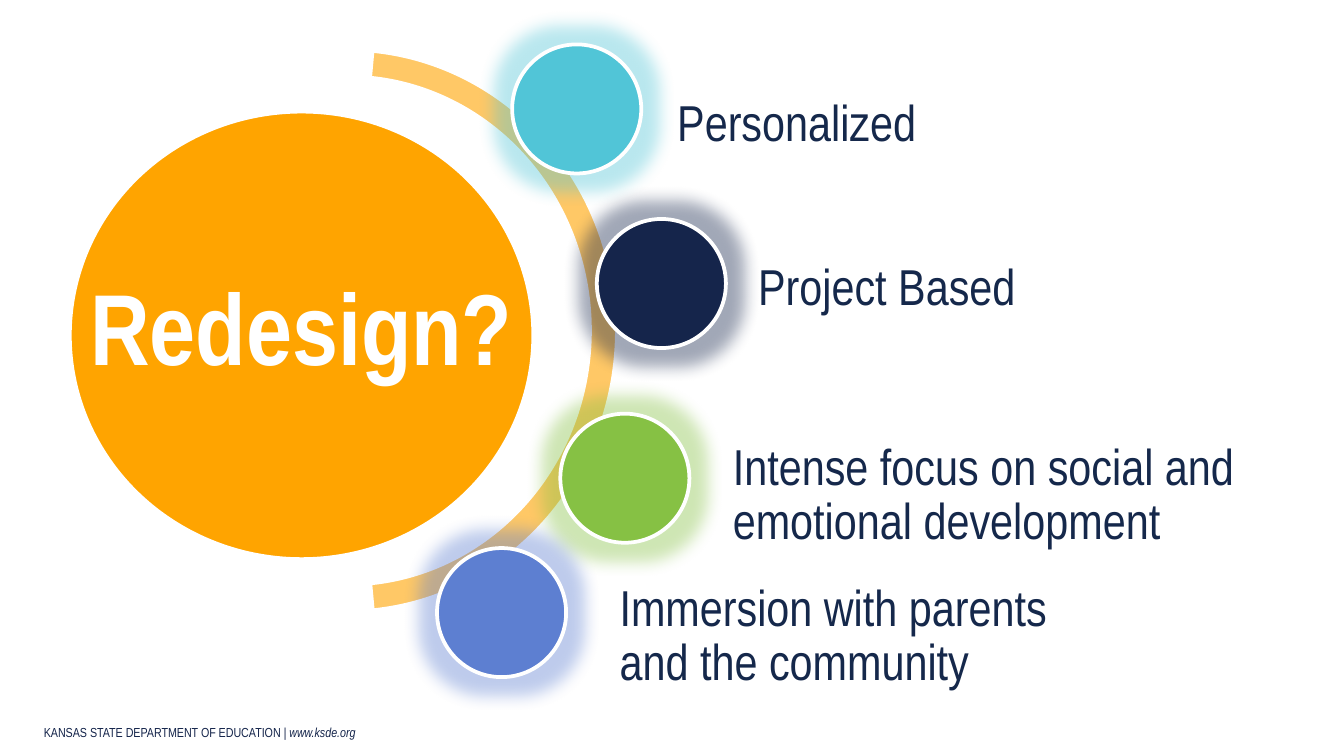
from dataclasses import dataclass

from lxml import etree
from pptx import Presentation
from pptx.dml.color import RGBColor
from pptx.enum.shapes import MSO_SHAPE as Preset
from pptx.enum.text import MSO_ANCHOR as Anchor, PP_ALIGN as Align
from pptx.oxml.ns import qn
from pptx.util import Cm, Pt

WHITE = RGBColor(0xFF, 0xFF, 0xFF)
NAVY = RGBColor(0x15, 0x25, 0x4B)
INK = RGBColor(0x15, 0x28, 0x4B)
ORANGE = RGBColor(0xFF, 0xA4, 0x00)
PALE_ORANGE = RGBColor(0xFF, 0xC8, 0x66)
GREEN = RGBColor(0x86, 0xC1, 0x44)
BLUE = RGBColor(0x5D, 0x7F, 0xD1)
CYAN = RGBColor(0x51, 0xC5, 0xD7)

FONT = "Arial Narrow"
DOT_SIZE = 2.44
GLOW_RADIUS = Pt(18)
GLOW_ALPHA = 40


@dataclass(frozen=True)
class Box:
    left: float
    top: float
    width: float
    height: float

    def lengths(self) -> tuple:
        return Cm(self.left), Cm(self.top), Cm(self.width), Cm(self.height)


@dataclass(frozen=True)
class Topic:
    text: str
    label: Box
    dot_left: float
    dot_top: float
    color: RGBColor
    anchor: Anchor = Anchor.MIDDLE
    inset: float = 0.08


# Listed from back to front
TOPICS = [
    Topic("Project Based", Box(14.25, 4.9, 7.62, 1.12), 11.28, 4.14, NAVY),
    Topic("Intense focus on social and emotional development",
          Box(13.77, 8.2, 10.06, 2.36), 10.59, 7.82, GREEN),
    Topic("Immersion with parents and the community",
          Box(11.63, 11.1, 8.69, 1.88), 8.26, 10.36, BLUE),
    Topic("Personalized", Box(12.8, 1.85, 8.03, 0.86), 9.68, 0.84, CYAN,
          Anchor.TOP, 0),
]


def add_figure(page, preset: Preset, box: Box, color: RGBColor):
    figure = page.shapes.add_shape(preset, *box.lengths())
    figure.shadow.inherit = False
    figure.fill.solid()
    figure.fill.fore_color.rgb = color
    figure.line.color.rgb = WHITE
    figure.line.width = Pt(2)
    return figure


def add_glow(figure, color: RGBColor) -> None:
    effects = figure._element.spPr.find(qn("a:effectLst"))
    glow = etree.SubElement(effects, qn("a:glow"), rad=str(int(GLOW_RADIUS)))
    tint = etree.SubElement(glow, qn("a:srgbClr"), val=str(color))
    etree.SubElement(tint, qn("a:alpha"), val=str(GLOW_ALPHA * 1000))


def set_frame(shape, anchor: Anchor, inset_x: float = 0, inset_y: float = 0,
              wrap: bool = True):
    frame = shape.text_frame
    frame.word_wrap = wrap
    frame.vertical_anchor = anchor
    frame.margin_left = frame.margin_right = Cm(inset_x)
    frame.margin_top = frame.margin_bottom = Cm(inset_y)
    return frame.paragraphs[0]


def add_span(para, text: str, *, size: float, color: RGBColor,
             bold: bool = False, italic: bool = False) -> None:
    span = para.add_run()
    span.text = text
    span.font.name = FONT
    span.font.size = Pt(size)
    span.font.color.rgb = color
    span.font.bold = bold
    span.font.italic = italic


def add_label(page, topic: Topic) -> None:
    label = page.shapes.add_textbox(*topic.label.lengths())
    para = set_frame(label, topic.anchor, topic.inset, topic.inset)
    para.line_spacing = 0.9
    add_span(para, topic.text, size=27, color=INK)


def add_dot(page, topic: Topic) -> None:
    box = Box(topic.dot_left, topic.dot_top, DOT_SIZE, DOT_SIZE)
    dot = add_figure(page, Preset.OVAL, box, topic.color)
    add_glow(dot, topic.color)


def main() -> None:
    deck = Presentation()
    deck.slide_width, deck.slide_height = Cm(25.4), Cm(14.29)
    page = deck.slides.add_slide(deck.slide_layouts[6])

    # Footer
    footer = page.shapes.add_textbox(*Box(0.58, 13.56, 12.12, 0.56).lengths())
    para = set_frame(footer, Anchor.BOTTOM, 0.25, 0.13)
    add_span(para, "KANSAS STATE DEPARTMENT OF EDUCATION ", size=7, color=NAVY)
    add_span(para, "| www.ksde.org", size=7, color=NAVY, italic=True)

    # Central question
    hub = add_figure(page, Preset.OVAL, Box(1.32, 2.11, 8.76, 8.46), ORANGE)
    para = set_frame(hub, Anchor.MIDDLE, wrap=False)
    para.alignment = Align.CENTER
    para.line_spacing = Pt(54)
    add_span(para, "Redesign?", size=54, color=WHITE, bold=True)

    # Arc that carries the dots
    arc = add_figure(page, Preset.BLOCK_ARC, Box(1.47, 0.94, 10.19, 10.62),
                     PALE_ORANGE)
    for index, value in enumerate((165.09, 50.88, 0.05)):
        arc.adjustments[index] = value

    # Topics
    for topic in TOPICS:
        add_label(page, topic)
        add_dot(page, topic)

    deck.save("out.pptx")


if __name__ == "__main__":
    main()
